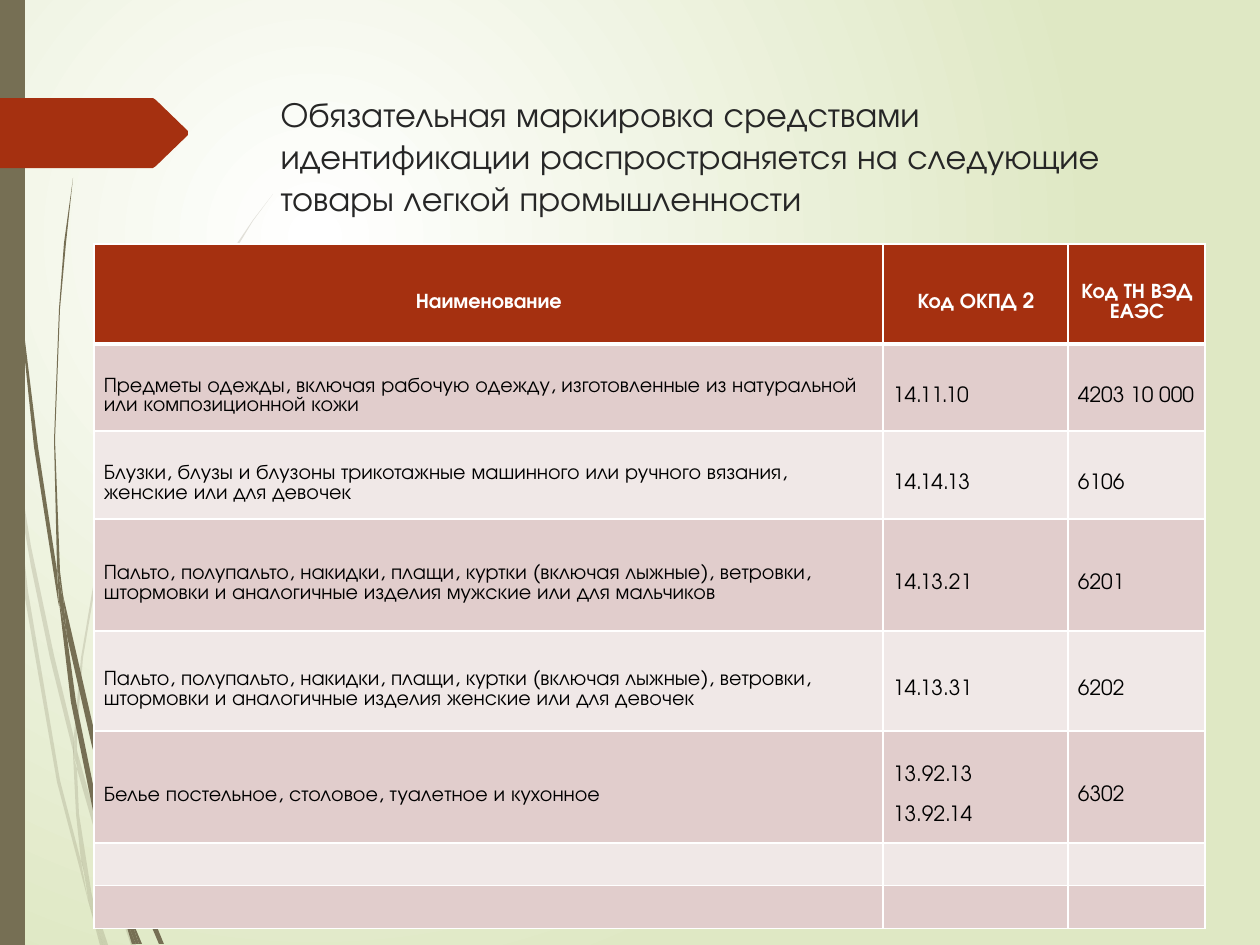
import lxml.etree
import pptx
import pptx.dml.color
import pptx.enum.text
import pptx.oxml
import pptx.oxml.ns
import pptx.util

PX = 914400 / 126
FONT = "TeX Gyre Adventor"
OLIVE, RED, WHITE = "766F54", "A53010", "FFFFFF"
BANDS = ("F0E8E7", "E1CDCC")
COLUMNS = (789, 185, 137)
ROWS = (100, 87, 88, 112, 100, 112, 43, 43)
CELLS = (
    ("Наименование", "Код ОКПД 2", "Код ТН ВЭД ЕАЭС"),
    ("Предметы одежды, включая рабочую одежду, изготовленные из натуральной или композиционной кожи",
     "14.11.10", "4203 10 000"),
    ("Блузки, блузы и блузоны трикотажные машинного или ручного вязания, женские или для девочек",
     "14.14.13", "6106"),
    ("Пальто, полупальто, накидки, плащи, куртки (включая лыжные), ветровки, "
     "штормовки и аналогичные изделия мужские или для мальчиков", "14.13.21", "6201"),
    ("Пальто, полупальто, накидки, плащи, куртки (включая лыжные), ветровки, "
     "штормовки и аналогичные изделия женские или для девочек", "14.13.31", "6202"),
    ("Белье постельное, столовое, туалетное и кухонное", "13.92.13\n13.92.14", "6302"),
    ("", "", ""),
    ("", "", ""),
)
PALE_STRANDS = (
    ((50, 658), (74, 755), (74, 738), (54, 655), (31, 546), (13, 435), (15, 474), (31, 566)),
    ((81, 765), (77, 751), (77, 769), (107, 874), (131, 945), (136, 945), (111, 872)),
    ((105, 945), (108, 945), (92, 896)),
    ((81, 861), (60, 780), (28, 591), (15, 474), (10, 441), (24, 592), (57, 782), (81, 873), (88, 900)),
    ((73, 755), (76, 814), (81, 861), (84, 872), (92, 896), (91, 890), (79, 814), (77, 769)),
    ((77, 736), (83, 658), (96, 582), (140, 440), (200, 309), (236, 249), (253, 221), (273, 194),
     (253, 220), (234, 248), (199, 307), (139, 438), (94, 581), (81, 658), (74, 736), (77, 751)),
    ((88, 900), (100, 945), (103, 945)),
    ((77, 766), (77, 751), (74, 738), (73, 755)),
    ((84, 872), (82, 861), (87, 891), (88, 900), (103, 945), (105, 945), (92, 896)),
)
DARK_STRANDS = (
    ((18, 294), (34, 447), (58, 601), (59, 606), (57, 571), (38, 447), (19, 292)),
    ((92, 746), (111, 813), (111, 795), (97, 743), (63, 595), (67, 636)),
    ((118, 818), (115, 808), (115, 827), (137, 892), (159, 944), (164, 944), (142, 890)),
    ((115, 871), (102, 828), (76, 701), (67, 636), (59, 601), (71, 702), (97, 830),
     (116, 892), (122, 910), (121, 903)),
    ((63, 595), (60, 571), (55, 440), (60, 309), (66, 243), (73, 178), (64, 243), (59, 309),
     (54, 440), (57, 566), (62, 595)),
    ((139, 944), (142, 944), (126, 906)),
    ((59, 601), (67, 636), (63, 595), (62, 595), (57, 566)),
    ((122, 910), (132, 944), (136, 944)),
    ((121, 890), (115, 871), (121, 903), (122, 910), (136, 944), (139, 944), (126, 906)),
)
ARROW = ((0, 0), (153, 0), (156, 2), (188, 33), (188, 37), (156, 68), (153, 70), (0, 70))


def px(length):
    """Turn a length in px into EMU."""
    return pptx.util.Emu(round(length * PX))


def rgb(code):
    """Turn a hex string into a colour."""
    return pptx.dml.color.RGBColor.from_string(code)


def add_child(parent, tag, **attributes):
    """Append a DrawingML element to its parent."""
    return lxml.etree.SubElement(parent, pptx.oxml.ns.qn(tag), attributes)


def style_font(para, size, color, bold=False):
    """Set the font of a paragraph."""
    para.font.name, para.font.size, para.font.bold = FONT, pptx.util.Pt(size), bold
    para.font.color.rgb = rgb(color)


def paint_background(page):
    """Fill the page with a radial gradient."""
    fill = page.background.fill
    fill.gradient()
    for stop, position, color in zip(fill.gradient_stops, (0, 1), (WHITE, "DFE8C4")):
        stop.position, stop.color.rgb = position, rgb(color)
    gradient = page.element.find(".//" + pptx.oxml.ns.qn("a:gradFill"))
    gradient.remove(gradient.find(pptx.oxml.ns.qn("a:lin")))
    circle = add_child(gradient, "a:path", path="circle")
    add_child(circle, "a:fillToRect", l="50000", t="50000", r="100000", b="100000")


def add_outline(page, box, points, color, opacity=100):
    """Draw a filled outline with points relative to the box."""
    left, top = box[:2]
    builder = page.shapes.build_freeform(*points[0], scale=PX)
    builder.add_line_segments(points[1:], close=True)
    shape = builder.convert_to_shape(px(left), px(top))
    shape.shadow.inherit = False
    shape.fill.solid()
    shape.fill.fore_color.rgb = rgb(color)
    shape.line.fill.background()
    if opacity < 100:
        tint = shape.element.find(".//" + pptx.oxml.ns.qn("a:srgbClr"))
        add_child(tint, "a:alpha", val=str(opacity * 1000))


def add_decoration(page, box):
    """Draw the strands, the side bar and the arrow at the left edge."""
    left, top, width, height = box
    for strand in PALE_STRANDS:
        add_outline(page, box, strand, OLIVE, 20)
    for strand in DARK_STRANDS:
        add_outline(page, box, strand, OLIVE)
    add_outline(page, box, ((0, 0), (25, 0), (25, height), (0, height)), OLIVE)
    add_outline(page, (left, top + 98), ARROW, RED)


def add_title(page, box, text):
    """Place and format the title placeholder."""
    title = page.shapes.title
    title.left, title.top, title.width, title.height = map(px, box)
    frame = title.text_frame
    frame.text = text
    frame.word_wrap = True
    frame.auto_size = pptx.enum.text.MSO_AUTO_SIZE.NONE
    frame.vertical_anchor = pptx.enum.text.MSO_ANCHOR.TOP
    para = frame.paragraphs[0]
    para.alignment = pptx.enum.text.PP_ALIGN.LEFT
    style_font(para, 20, "262626")


def border_cell(cell, row):
    """Give a cell white borders, heavy between header and body."""
    properties = cell._tc.get_or_add_tcPr()
    for side in "LRTB":
        heavy = (row, side) in ((0, "B"), (1, "T"))
        line = add_child(properties, "a:ln" + side, w=str(pptx.util.Pt(3 if heavy else 1)))
        add_child(add_child(line, "a:solidFill"), "a:srgbClr", val=WHITE)


def fill_cell(cell, row, text):
    """Write and format one table cell."""
    header = row == 0
    border_cell(cell, row)
    cell.fill.solid()
    cell.fill.fore_color.rgb = rgb(RED if header else BANDS[row % 2])
    cell.vertical_anchor = pptx.enum.text.MSO_ANCHOR.MIDDLE
    cell.margin_left, cell.margin_right = px(10), px(9)
    cell.margin_top, cell.margin_bottom = px(24 if text else 6), px(6)
    cell.text_frame.text = text
    for index, para in enumerate(cell.text_frame.paragraphs):
        para.space_before = px(20 if index else 0)
        if header:
            para.alignment = pptx.enum.text.PP_ALIGN.CENTER
        style_font(para, 12, WHITE if header else "000000", header)


def add_goods_table(page, box):
    """Build the table of goods and their codes."""
    table = page.shapes.add_table(len(ROWS), len(COLUMNS), *map(px, box)).table
    table.first_row = table.horz_banding = False
    for column, width in zip(table.columns, COLUMNS):
        column.width = px(width)
    for row, (height, texts) in enumerate(zip(ROWS, CELLS)):
        table.rows[row].height = px(height)
        for column, text in enumerate(texts):
            fill_cell(table.cell(row, column), row, text)


def main():
    """Build the slide and save it."""
    deck = pptx.Presentation()
    deck.slide_width, deck.slide_height = px(1260), px(945)
    page = deck.slides.add_slide(deck.slide_layouts[5])
    paint_background(page)
    add_decoration(page, (0, 0, 1260, 945))
    add_title(page, (268, 86, 908, 176),
              "Обязательная маркировка средствами идентификации распространяется "
              "на следующие товары легкой промышленности")
    add_goods_table(page, (94, 244, sum(COLUMNS), sum(ROWS)))
    deck.save("out.pptx")


if __name__ == "__main__":
    main()
